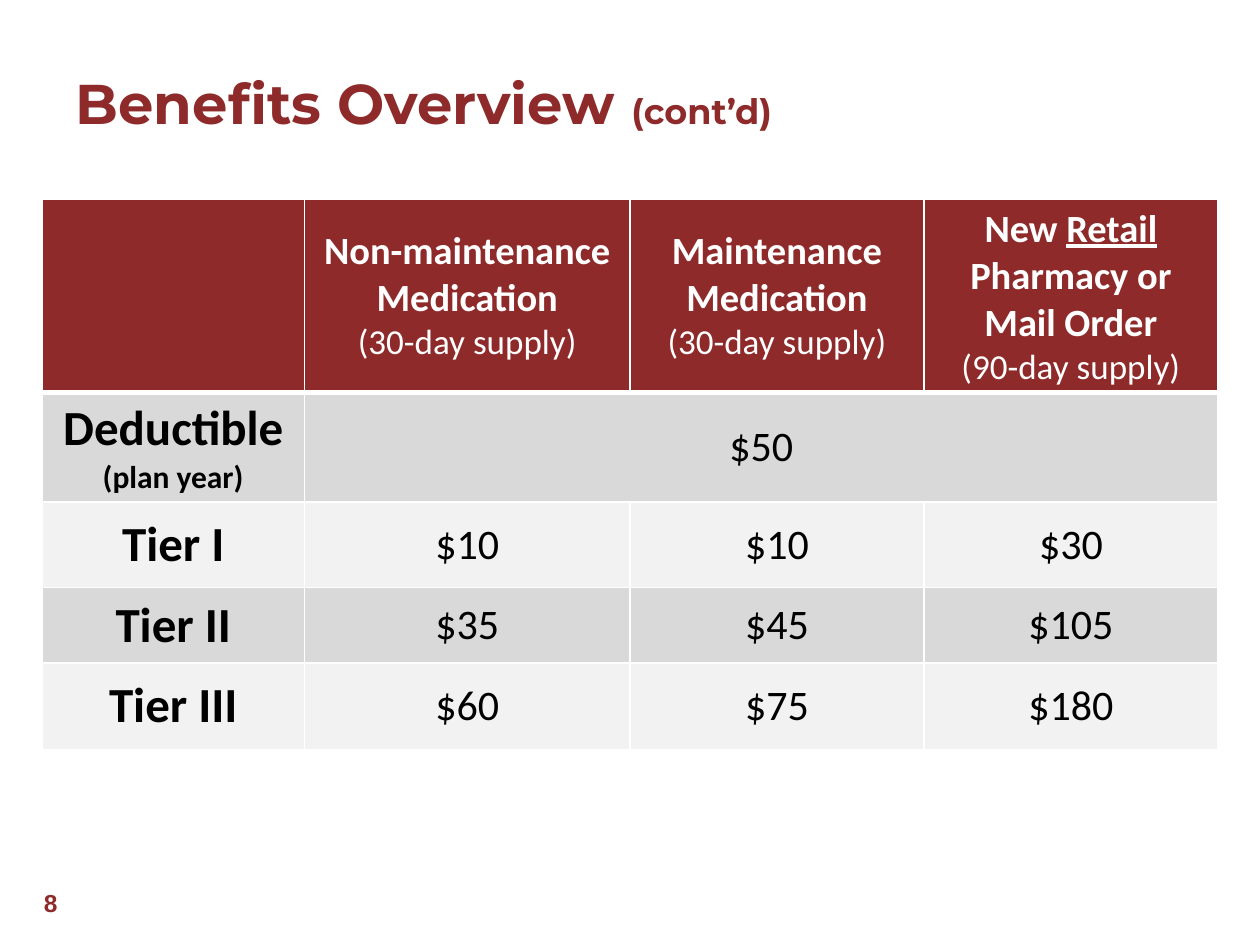
import pptx
import pptx.util
import pptx.dml.color
import pptx.enum.text
import pptx.oxml
import pptx.oxml.ns

Pt = pptx.util.Pt
COLORS = {"red": "8F2A2A", "white": "FFFFFF", "black": "000000",
          "dark_band": "D9D9D9", "light_band": "F2F2F2"}
COLUMN_WIDTHS = [150, 186, 168, 168]
ROW_HEIGHTS = [91.5, 49, 49, 43, 49.5]
TABLE_HEIGHT = 314.6


def header(*lines, supply):
    return [[(line, 22, True)] for line in lines] + [[(supply, 20, False)]]


def label(text):
    return [[(text, 28, True)]]


def price(text):
    return [[(text, 24, False)]]


class SlideBuilder:
    def __init__(self, slide):
        self.slide = slide
        self.body_font = "Calibri"
        self.title_font = "Montserrat"
        self.number_font = "Arial"

    def color(self, name):
        return pptx.dml.color.RGBColor.from_string(COLORS[name])

    def add_spans(self, para, spans, font, color):
        for text, size, bold, *underline in spans:
            span = para.add_run()
            span.text = text
            span.font.name = font
            span.font.size = Pt(size)
            span.font.bold = bold
            if underline:
                span.font.underline = True
            span.font.color.rgb = self.color(color)

    def title(self, spans, left, top, width, height):
        box = self.slide.shapes.title
        box.left, box.top, box.width, box.height = map(Pt, (left, top, width, height))
        frame = box.text_frame
        frame.auto_size = pptx.enum.text.MSO_AUTO_SIZE.NONE
        frame.vertical_anchor = pptx.enum.text.MSO_ANCHOR.MIDDLE
        para = frame.paragraphs[0]
        para.alignment = pptx.enum.text.PP_ALIGN.LEFT
        self.add_spans(para, spans, self.title_font, "red")

    def page_number(self, text, left, top, width, height):
        box = self.slide.shapes.add_textbox(*map(Pt, (left, top, width, height)))
        frame = box.text_frame
        frame.word_wrap = True
        frame.auto_size = pptx.enum.text.MSO_AUTO_SIZE.SHAPE_TO_FIT_TEXT
        self.add_spans(frame.paragraphs[0], [(text, 14, True)], self.number_font, "red")

    def borders(self, cell, bottom):
        properties = cell._tc.get_or_add_tcPr()
        namespace = pptx.oxml.ns.nsdecls("a")
        for index, (side, width) in enumerate(
                [("L", 1), ("R", 1), ("T", 1), ("B", bottom)]):
            line = pptx.oxml.parse_xml(
                f'<a:ln{side} {namespace} w="{Pt(width)}"><a:solidFill>'
                f'<a:srgbClr val="{COLORS["white"]}"/></a:solidFill></a:ln{side}>')
            properties.insert(index, line)

    def cell(self, cell, paragraphs, fill, color, bottom):
        cell.fill.solid()
        cell.fill.fore_color.rgb = self.color(fill)
        cell.vertical_anchor = pptx.enum.text.MSO_ANCHOR.MIDDLE
        self.borders(cell, bottom)
        frame = cell.text_frame
        for index, spans in enumerate(paragraphs):
            para = frame.add_paragraph() if index else frame.paragraphs[0]
            para.alignment = pptx.enum.text.PP_ALIGN.CENTER
            self.add_spans(para, spans, self.body_font, color)

    def table(self, rows, left, top):
        holder = self.slide.shapes.add_table(
            len(rows), len(COLUMN_WIDTHS), Pt(left), Pt(top),
            Pt(sum(COLUMN_WIDTHS)), Pt(TABLE_HEIGHT))
        table = holder.table
        table.horz_banding = False
        for column, width in zip(table.columns, COLUMN_WIDTHS):
            column.width = Pt(width)
        for row, height in zip(table.rows, ROW_HEIGHTS):
            row.height = Pt(height)
        holder.height = Pt(TABLE_HEIGHT)
        for row_index, contents in enumerate(rows):
            if row_index == 0:
                look = ("red", "white", 3)
            else:
                look = ("dark_band" if row_index % 2 else "light_band", "black", 1)
            for column_index, paragraphs in enumerate(contents):
                self.cell(table.cell(row_index, column_index), paragraphs, *look)
        return table


def main():
    deck = pptx.Presentation()
    deck.slide_width, deck.slide_height = Pt(720), Pt(540)
    page = SlideBuilder(deck.slides.add_slide(deck.slide_layouts[5]))
    page.page_number("8", 18, 504, 42, 24.5)
    page.title([("Benefits Overview ", 32, True), ("(cont’d)", 20, True)],
               36, 26.6, 648, 63.4)
    retail = [[("New ", 22, True), ("Retail ", 22, True, True),
               ("Pharmacy or Mail Order", 22, True)],
              [("(90-day supply)", 20, False)]]
    rows = [
        [[], header("Non-maintenance", "Medication", supply="(30-day supply)"),
         header("Maintenance Medication", supply="(30-day supply)"), retail],
        [label("Deductible") + [[("(plan year)", 18, True)]], price("$50"), [], []],
    ]
    tiers = [("Tier I", "$10", "$10", "$30"),
             ("Tier II", "$35", "$45", "$105"),
             ("Tier III", "$60", "$75", "$180")]
    rows += [[label(tier), *map(price, prices)] for tier, *prices in tiers]
    table = page.table(rows, 24, 114)
    table.cell(1, 1).merge(table.cell(1, 3))
    deck.save("out.pptx")


if __name__ == "__main__":
    main()
